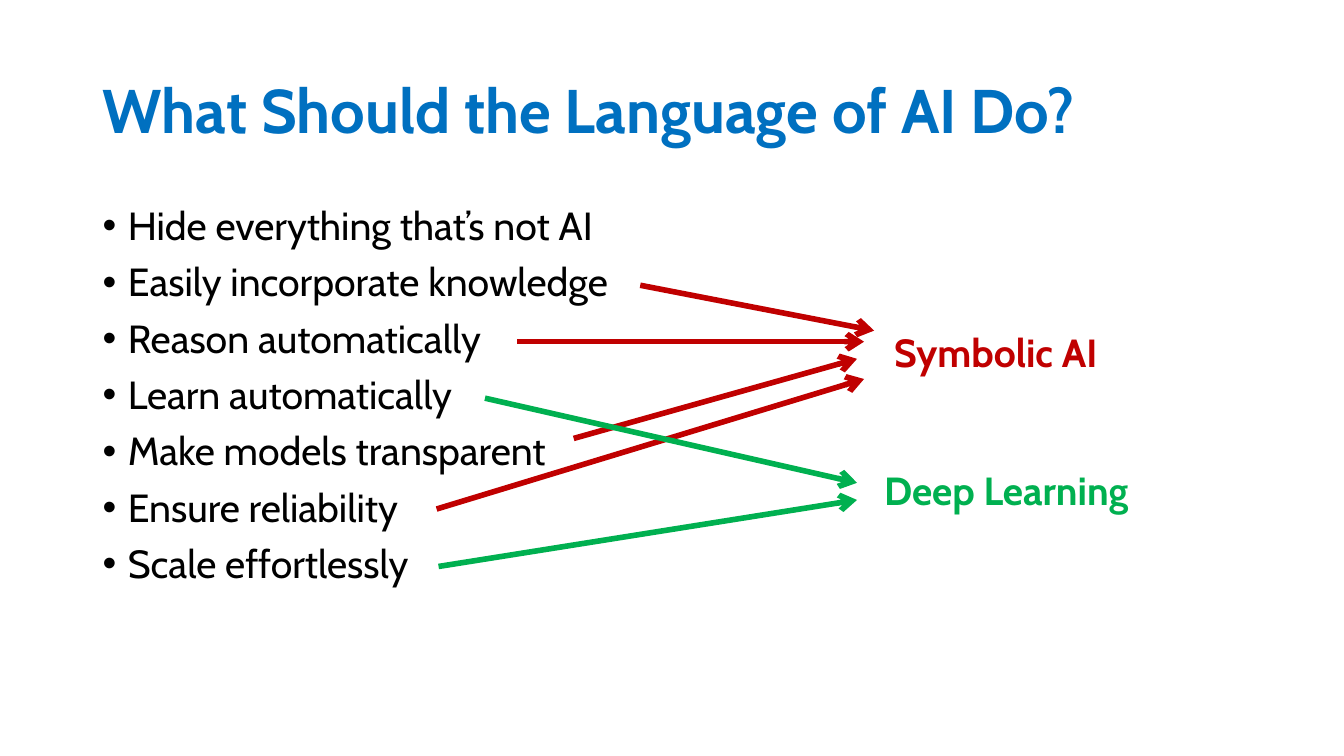
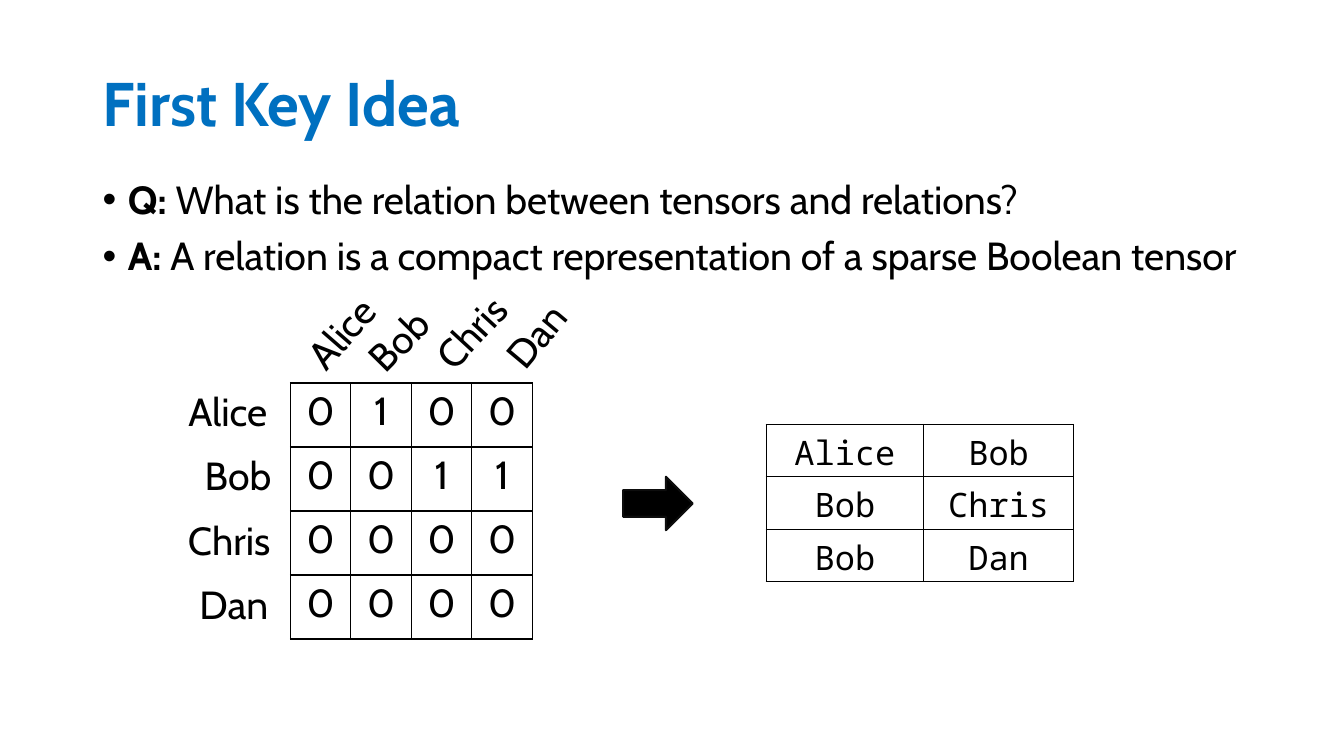
import dataclasses

import lxml.etree
import pptx
import pptx.dml.color
import pptx.enum.shapes
import pptx.enum.text
import pptx.oxml.ns
import pptx.util

Inches = pptx.util.Inches
Align = pptx.enum.text.PP_ALIGN
Anchor = pptx.enum.text.MSO_ANCHOR
qn = pptx.oxml.ns.qn


@dataclasses.dataclass(frozen=True)
class Theme:
    font: str = "Cabin"
    mono_font: str = "Noto Sans Mono"
    title_color: str = "0070C0"
    text_color: str = "000000"
    symbolic_color: str = "C00000"
    learning_color: str = "00B050"
    outline_color: str = "0D0D0D"
    title_size: int = 44
    body_size: int = 28
    mono_size: int = 24
    arrow_width: float = 4
    outline_width: float = 1.5
    border_width: float = 1


def rgb(color):
    return pptx.dml.color.RGBColor.from_string(color)


class Deck:
    """Build slides in one shared style."""

    def __init__(self, theme):
        self.theme = theme
        self.presentation = pptx.Presentation()
        self.presentation.slide_width = Inches(13.33)
        self.presentation.slide_height = Inches(7.5)
        self.slide = None

    def start_slide(self, title, top):
        self.slide = self.presentation.slides.add_slide(self.presentation.slide_layouts[6])
        text_frame = self.text_box(0.92, top, 11.5, 1.45).text_frame
        text_frame.vertical_anchor = Anchor.MIDDLE
        paragraph = text_frame.paragraphs[0]
        paragraph.text = title
        paragraph.line_spacing = 0.9
        self.format_runs(paragraph, self.theme.title_color, self.theme.title_size, bold=True)

    def format_runs(self, paragraph, color=None, size=None, font=None, bold=False):
        for run in paragraph.runs:
            run.font.name = font or self.theme.font
            run.font.size = pptx.util.Pt(size or self.theme.body_size)
            run.font.color.rgb = rgb(color or self.theme.text_color)
            run.font.bold = bold

    def text_box(self, left, top, width, height, wrap=True):
        shape = self.slide.shapes.add_textbox(
            Inches(left), Inches(top), Inches(width), Inches(height))
        shape.text_frame.word_wrap = wrap
        return shape

    def bullets(self, left, top, width, height, items):
        text_frame = self.text_box(left, top, width, height).text_frame
        text_frame.text = "\n".join(items)
        for paragraph in text_frame.paragraphs:
            paragraph.line_spacing = 0.9
            paragraph.space_before = pptx.util.Pt(10)
            self.format_runs(paragraph)
            properties = paragraph._p.get_or_add_pPr()
            properties.set("marL", str(Inches(0.25)))
            properties.set("indent", str(-Inches(0.25)))
            lxml.etree.SubElement(properties, qn("a:buFont"), typeface="Arial")
            lxml.etree.SubElement(properties, qn("a:buChar"), char="•")
        return text_frame

    def questions(self, left, top, width, height, pairs):
        text_frame = self.bullets(left, top, width, height, [lead for lead, _ in pairs])
        for paragraph, (_, sentence) in zip(text_frame.paragraphs, pairs):
            paragraph.add_run().text = sentence
            self.format_runs(paragraph)
            paragraph.runs[0].font.bold = True

    def heading(self, text, left, top, width, color):
        paragraph = self.text_box(left, top, width, 0.57).text_frame.paragraphs[0]
        paragraph.text = text
        self.format_runs(paragraph, color, bold=True)

    def label(self, text, left, top, width, rotation=0):
        shape = self.text_box(left, top, width, 0.57, wrap=False)
        shape.rotation = rotation
        paragraph = shape.text_frame.paragraphs[0]
        paragraph.text = text
        paragraph.alignment = Align.RIGHT
        self.format_runs(paragraph)

    def arrow(self, start, end, color):
        connector = self.slide.shapes.add_connector(
            pptx.enum.shapes.MSO_CONNECTOR.STRAIGHT, *map(Inches, start + end))
        connector.line.color.rgb = rgb(color)
        connector.line.width = pptx.util.Pt(self.theme.arrow_width)
        lxml.etree.SubElement(connector.line._get_or_add_ln(), qn("a:tailEnd"), type="arrow")
        lxml.etree.SubElement(connector._element.spPr, qn("a:effectLst"))

    def block_arrow(self, left, top, width, height):
        shape = self.slide.shapes.add_shape(
            pptx.enum.shapes.MSO_SHAPE.RIGHT_ARROW,
            Inches(left), Inches(top), Inches(width), Inches(height))
        shape.shadow.inherit = False
        shape.fill.solid()
        shape.fill.fore_color.rgb = rgb(self.theme.text_color)
        shape.line.color.rgb = rgb(self.theme.outline_color)
        shape.line.width = pptx.util.Pt(self.theme.outline_width)

    def table(self, left, top, column_widths, row_height, rows, font=None, size=None):
        table = self.slide.shapes.add_table(
            len(rows), len(column_widths), Inches(left), Inches(top),
            Inches(sum(column_widths)), Inches(row_height * len(rows))).table
        table.first_row = table.horz_banding = False
        for column, width in zip(table.columns, column_widths):
            column.width = Inches(width)
        for row, values in zip(table.rows, rows):
            row.height = Inches(row_height)
            for cell, value in zip(row.cells, values):
                cell.text = value
                paragraph = cell.text_frame.paragraphs[0]
                paragraph.alignment = Align.CENTER
                self.format_runs(paragraph, font=font, size=size)
                self.cell_borders(cell)
                cell.fill.background()

    def cell_borders(self, cell):
        properties = cell._tc.get_or_add_tcPr()
        width = str(pptx.util.Pt(self.theme.border_width))
        for side in ("a:lnL", "a:lnR", "a:lnT", "a:lnB"):
            border = lxml.etree.SubElement(properties, qn(side), w=width)
            fill = lxml.etree.SubElement(border, qn("a:solidFill"))
            lxml.etree.SubElement(fill, qn("a:srgbClr"), val=self.theme.text_color)


def build_language_slide(deck):
    theme = deck.theme
    deck.start_slide("What Should the Language of AI Do?", 0.4)
    deck.bullets(0.92, 2, 11.5, 4.76, [
        "Hide everything that’s not AI",
        "Easily incorporate knowledge",
        "Reason automatically",
        "Learn automatically",
        "Make models transparent",
        "Ensure reliability",
        "Scale effortlessly",
    ])
    deck.heading("Symbolic AI", 8.77, 3.21, 2.33, theme.symbolic_color)
    deck.heading("Deep Learning", 8.67, 4.58, 2.75, theme.learning_color)
    arrows = {
        theme.symbolic_color: [
            ((6.35, 2.83), (8.67, 3.28)),
            ((5.13, 3.39), (8.57, 3.39)),
            ((5.69, 4.35), (8.5, 3.56)),
            ((4.33, 5.05), (8.57, 3.76)),
        ],
        theme.learning_color: [
            ((4.81, 3.95), (8.5, 4.79)),
            ((4.35, 5.62), (8.5, 4.96)),
        ],
    }
    for color, lines in arrows.items():
        for start, end in lines:
            deck.arrow(start, end, color)


def build_key_idea_slide(deck):
    theme = deck.theme
    deck.start_slide("First Key Idea", 0.33)
    deck.questions(0.92, 1.74, 11.92, 1.16, [
        ("Q: ", "What is the relation between tensors and relations?"),
        ("A: ", "A relation is a compact representation of a sparse Boolean tensor"),
    ])
    names = ["Alice", "Bob", "Chris", "Dan"]
    relation = [("Alice", "Bob"), ("Bob", "Chris"), ("Bob", "Dan")]
    tensor = [[str(int((row, column) in relation)) for column in names] for row in names]
    row_height = 0.635
    deck.table(2.88, 3.8, [0.6] * len(names), row_height, tensor)

    widths = [1.04, 0.88, 1.1, 0.9]
    row_lefts = [1.71, 1.91, 1.68, 1.86]
    column_places = [(2.84, 3.04, 311.1), (3.5, 3.1, 314.7), (4.09, 3.04, 312.6), (4.86, 3.05, 310)]
    for index, (name, width) in enumerate(zip(names, widths)):
        deck.label(name, row_lefts[index], 3.79 + index * 0.64, width)
        left, top, rotation = column_places[index]
        deck.label(name, left, top, width, rotation)

    deck.block_arrow(6.18, 4.73, 0.69, 0.53)
    deck.table(7.6, 4.21, [1.56, 1.49], 0.52, relation, theme.mono_font, theme.mono_size)


def main():
    deck = Deck(Theme())
    build_language_slide(deck)
    build_key_idea_slide(deck)
    deck.presentation.save("out.pptx")


if __name__ == "__main__":
    main()
